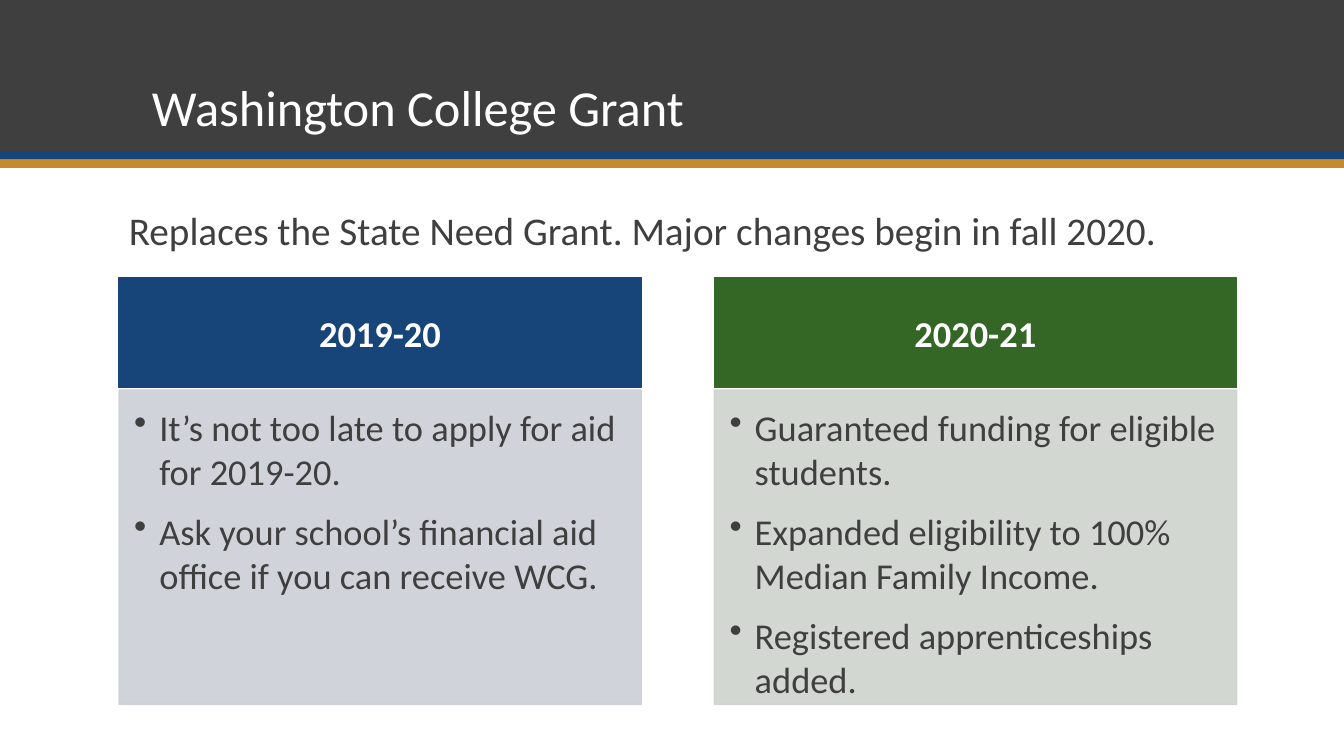
from lxml import etree
from pptx import Presentation
from pptx.dml.color import RGBColor
from pptx.enum.shapes import MSO_SHAPE as Shape
from pptx.enum.text import MSO_ANCHOR as Anchor, PP_ALIGN as Align
from pptx.oxml.ns import qn
from pptx.util import Pt

CHARCOAL = RGBColor(0x3F, 0x3F, 0x3F)
BLUE = RGBColor(0x17, 0x44, 0x79)
GOLD = RGBColor(0xC6, 0x89, 0x2B)
GREEN = RGBColor(0x34, 0x66, 0x25)
PALE_BLUE = RGBColor(0xCC, 0xCF, 0xD7)
PALE_GREEN = RGBColor(0xCE, 0xD3, 0xCD)
WHITE = RGBColor(0xFF, 0xFF, 0xFF)

deck = Presentation()
deck.slide_width, deck.slide_height = Pt(960), Pt(540)
page = deck.slides.add_slide(deck.slide_layouts[6])


def add_block(left, top, width, height, color=None, insets=(7.2, 3.6, 7.2, 3.6)):
    """Add a rectangle filled with color, or a plain text box without one."""
    place = Pt(left), Pt(top), Pt(width), Pt(height)
    if color is None:
        block = page.shapes.add_textbox(*place)
    else:
        block = page.shapes.add_shape(Shape.RECTANGLE, *place)
        block.shadow.inherit = False
        block.fill.solid()
        block.fill.fore_color.rgb = color
        block.line.fill.background()
    frame = block.text_frame
    frame.word_wrap = True
    frame.vertical_anchor = Anchor.TOP
    (frame.margin_left, frame.margin_top,
     frame.margin_right, frame.margin_bottom) = map(Pt, insets)
    return block


def write(para, text, size, color, bold=False, align=Align.LEFT):
    para.text = text
    para.alignment = align
    para.font.name = "Calibri"
    para.font.size = Pt(size)
    para.font.bold = bold
    para.font.color.rgb = color


# Title band with its two stripes
for top, height, color in [(0, 108, CHARCOAL), (108, 6, BLUE), (113.8, 6.2, GOLD)]:
    add_block(0, top, 960, height, color)

title = add_block(101.5, 38.2, 678, 63.4).text_frame
title.vertical_anchor = Anchor.BOTTOM
title.paragraphs[0].line_spacing = 0.9
write(title.paragraphs[0], "Washington College Grant", 36, WHITE)

intro = add_block(85, 144, 798.5, 44).text_frame
write(intro.paragraphs[0],
      "Replaces the State Need Grant. Major changes begin in fall 2020.", 28, CHARCOAL)

# One column per school year
columns = [
    ("2019-20", BLUE, PALE_BLUE, [
        "It’s not too late to apply for aid for 2019-20.",
        "Ask your school’s financial aid office if you can receive WCG.",
    ]),
    ("2020-21", GREEN, PALE_GREEN, [
        "Guaranteed funding for eligible students.",
        "Expanded eligibility to 100% Median Family Income.",
        "Registered apprenticeships added.",
    ]),
]
for index, (year, color, pale, points) in enumerate(columns):
    left = 85 + index * 425.3
    header = add_block(left, 198.2, 373, 78.8, color, (14.4, 8.6, 14.4, 8.6))
    panel = add_block(left, 278.6, 373, 224.6, pale, (10.8, 10.8, 14.4, 16.6))
    for block, edge in [(header, color), (panel, pale)]:
        block.line.color.rgb = edge
        block.line.width = Pt(1)
    for tint in panel.element.spPr.iter(qn("a:srgbClr")):
        etree.SubElement(tint, qn("a:alpha"), val="90000")

    header.text_frame.vertical_anchor = Anchor.MIDDLE
    write(header.text_frame.paragraphs[0], year, 26, WHITE, True, Align.CENTER)

    frame = panel.text_frame
    for number, point in enumerate(points):
        para = frame.add_paragraph() if number else frame.paragraphs[0]
        para.space_after = Pt(12)
        props = para._p.get_or_add_pPr()
        props.set("marL", str(Pt(18)))
        props.set("indent", str(-Pt(18)))
        etree.SubElement(props, qn("a:buChar"), char="•")
        write(para, point, 26, CHARCOAL)

deck.save("out.pptx")
